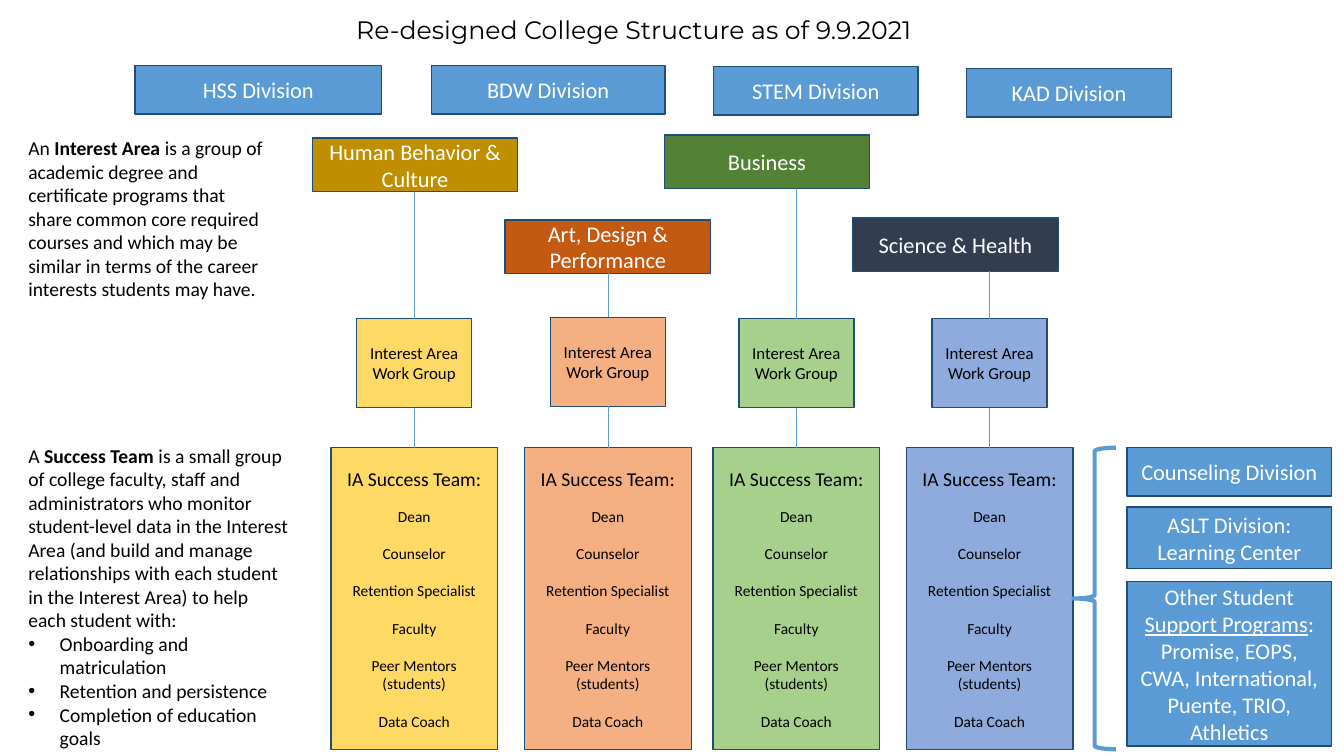
"""Build the college structure slide: divisions, interest areas and success teams."""
from pptx import Presentation
from pptx import util as u
from pptx.dml import color
from pptx.enum import shapes, text
from lxml import etree

NS = "http://schemas.openxmlformats.org/drawingml/2006/main"
BLUE, EDGE, WHITE, BLACK = "5B9BD5", "1F4D78", "FFFFFF", "000000"
Cm, Pt = u.Cm, u.Pt
ink = color.RGBColor.from_string
mid, top = text.MSO_ANCHOR.MIDDLE, text.MSO_ANCHOR.TOP
center, left = text.PP_ALIGN.CENTER, text.PP_ALIGN.LEFT


def write(para, words, size, tint, mark="bold", face="Calibri", align=center, gap=0):
    """Fill a paragraph; words between bars take the marked format."""
    for key, val in {"alignment": align, "space_before": Pt(gap)}.items():
        setattr(para, key, val)
    for i, part in enumerate(words.split("|")):
        run = para.add_run()
        run.text = part
        for key, val in {"name": face, "size": Pt(size), mark: i % 2 == 1}.items():
            setattr(run.font, key, val)
        run.font.color.rgb = ink(tint)


def box(kind, x, y, w, h, fill, words, size=16, tint=WHITE):
    """Add a filled, outlined box with centred text."""
    shape = slide.shapes.add_shape(kind, Cm(x), Cm(y), Cm(w), Cm(h))
    shape.shadow.inherit = False
    shape.fill.solid()
    shape.fill.fore_color.rgb = ink(fill)
    shape.line.color.rgb = ink(EDGE)
    shape.line.width = Pt(1)
    frame = shape.text_frame
    frame.word_wrap = True
    frame.vertical_anchor = mid
    write(frame.paragraphs[0], words, size, tint, "underline")
    return frame


deck = Presentation()
deck.slide_width, deck.slide_height = Cm(33.87), Cm(19.05)
slide = deck.slides.add_slide(deck.slide_layouts[3])
rect, flow = shapes.MSO_SHAPE.RECTANGLE, shapes.MSO_SHAPE.FLOWCHART_PROCESS

title, goals, about = slide.placeholders
places = [
    (title, 7.77, 0.23, 16.41, 1.02, mid, False),
    (goals, 0.46, 11.05, 7.09, 8, top, True),
    (about, 0.46, 3.3, 6.68, 4.45, top, True),
]
for holder, x, y, w, h, anchor, wrap in places:
    spot = {"left": Cm(x), "top": Cm(y), "width": Cm(w), "height": Cm(h)}
    for key, val in spot.items():
        setattr(holder, key, val)
    look = {"vertical_anchor": anchor, "word_wrap": wrap,
            "auto_size": text.MSO_AUTO_SIZE.NONE}
    for key, val in look.items():
        setattr(holder.text_frame, key, val)

write(title.text_frame.paragraphs[0], "Re-designed College Structure as of 9.9.2021",
      18, BLACK, face="Montserrat")

intros = [
    (about, "An |Interest Area| is a group of academic degree and certificate programs "
            "that share common core required courses and which may be similar in terms "
            "of the career interests students may have."),
    (goals, "A |Success Team| is a small group of college faculty, staff and "
            "administrators who monitor student-level data in the Interest Area (and "
            "build and manage relationships with each student in the Interest Area) to "
            "help each student with:"),
]
for holder, words in intros:
    para = holder.text_frame.paragraphs[0]
    write(para, words, 14, BLACK, align=left)
    props = para._p.get_or_add_pPr()
    props.set("marL", "0")
    props.set("indent", "0")
    etree.SubElement(props, f"{{{NS}}}buNone")

for goal in ["Onboarding and matriculation", "Retention and persistence",
             "Completion of education goals"]:
    para = goals.text_frame.add_paragraph()
    write(para, goal, 14, BLACK, align=left)
    props = para._p.get_or_add_pPr()
    props.set("marL", str(int(Cm(0.79))))
    props.set("indent", str(-int(Cm(0.79))))

blocks = [
    ("HSS Division", 3.4, 1.65, 6.22, 1.22),
    ("BDW Division", 10.87, 1.65, 5.89, 1.22),
    ("STEM Division", 17.98, 1.68, 5.16, 1.22),
    ("KAD Division", 24.36, 1.73, 5.16, 1.22),
    ("Counseling Division", 28.4, 11.28, 5.16, 1.22),
    ("ASLT Division: Learning Center", 28.4, 12.78, 5.16, 1.55),
    ("Other Student |Support Programs|: Promise, EOPS, CWA, International, "
     "Puente, TRIO, Athletics", 28.4, 14.66, 5.16, 4.14),
]
for words, x, y, w, h in blocks:
    box(rect, x, y, w, h, BLUE, words)

areas = [
    ("Human Behavior & Culture", 7.87, 3.48, "BF8F00", 10.44, 8.03, "FFD966"),
    ("Art, Design & Performance", 12.73, 5.54, "C45911", 15.32, 8, "F4B083"),
    ("Business", 16.74, 3.4, "538135", 20.07, 8.03, "A8D08D"),
    ("Science & Health", 21.49, 5.49, "323E4F", 24.94, 8.03, "8FAADC"),
]
roles = ["Dean", "Counselor", "Retention Specialist", "Faculty",
         "Peer Mentors (students)", "Data Coach"]
for name, x, y, dark, axis, work, pale in areas:
    box(rect, x, y, 5.18, 1.35, dark, name)
    box(flow, axis - 1.45, work, 2.9, 2.24, pale, "Interest Area Work Group", 12, BLACK)
    team = box(flow, axis - 2.1, 11.28, 4.2, 7.6, pale, "IA Success Team:", 14, BLACK)
    for role in roles:
        write(team.add_paragraph(), role, 11, BLACK, gap=12 if role == "Dean" else 13.4)
    for start, end in [(y + 1.35, work), (work + 2.24, 11.28)]:
        link = slide.shapes.add_connector(shapes.MSO_CONNECTOR.STRAIGHT,
                                          Cm(axis), Cm(start), Cm(axis), Cm(end))
        link.line.color.rgb = ink(BLUE)
        link.line.width = Pt(0.5)
        etree.SubElement(link._element.spPr, f"{{{NS}}}effectLst")

brace = slide.shapes.add_shape(shapes.MSO_SHAPE.RIGHT_BRACE,
                               Cm(27.05), Cm(11.28), Cm(1.07), Cm(7.6))
brace.rotation = 180
brace.shadow.inherit = False
brace.fill.background()
brace.line.color.rgb = ink(BLUE)
brace.line.width = Pt(3)

deck.save("out.pptx")
